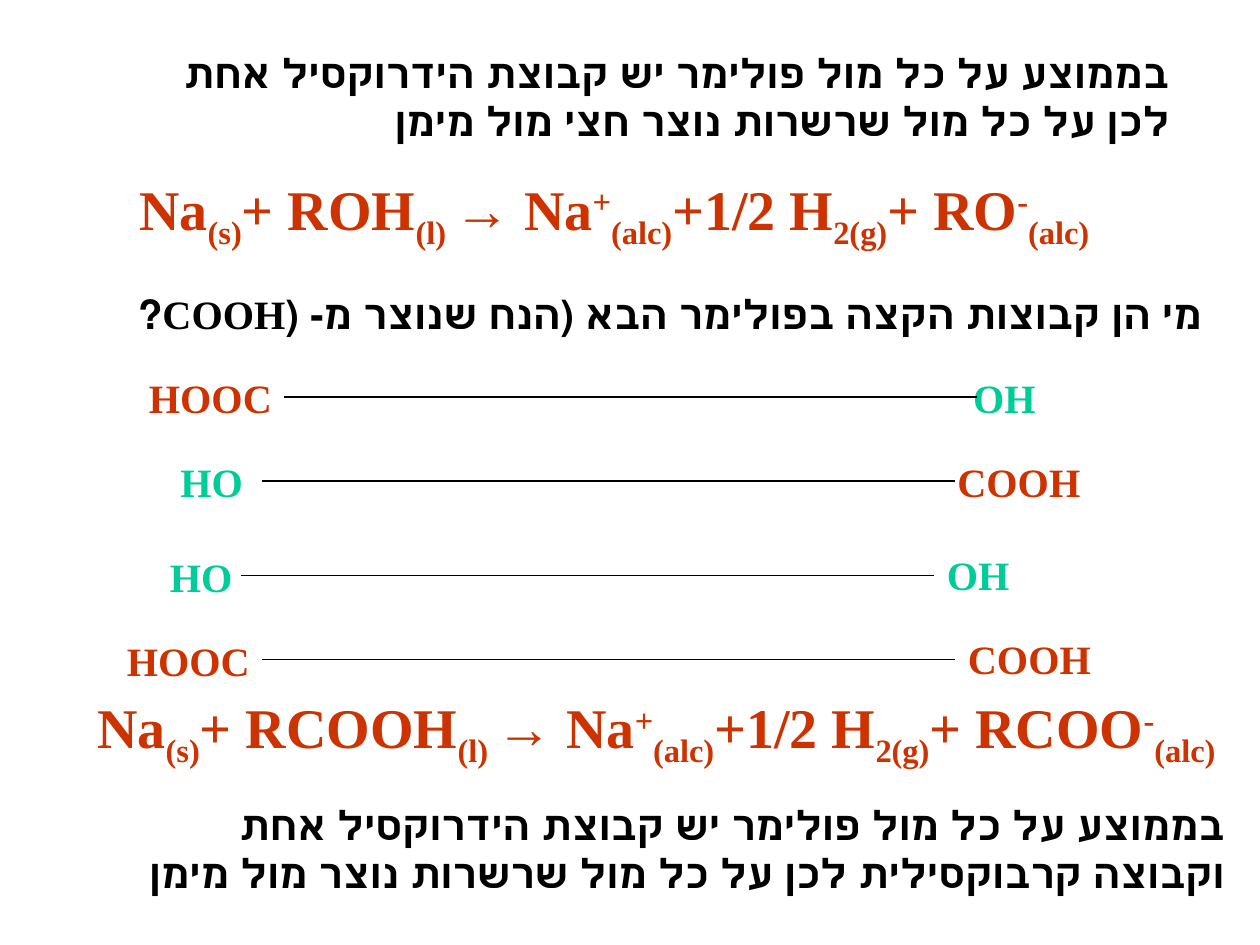
import pptx
import pptx.util
import pptx.dml.color
import pptx.enum.text
import pptx.enum.shapes
import lxml.etree

HUES = {"black": "000000", "red": "CC3300", "green": "00CC99"}
TINT = {"HOOC": "red", "COOH": "red", "HO": "green", "OH": "green"}
FONT = {"name": "Times New Roman", "bold": True}
BASE = {"_": "-25000", "^": "30000"}
ALIGN = pptx.enum.text.PP_ALIGN

NOTES = [
    (6.1, 4, 106.6, 10.4, ["בממוצע על כל מול פולימר יש קבוצת הידרוקסיל אחת",
                           "לכן על כל מול שרשרות נוצר חצי מול מימן"]),
    (-0.6, 27, 116.4, 5.9, ["מי הן קבוצות הקצה בפולימר הבא (הנח שנוצר מ- (COOH?"]),
    (0.4, 75.6, 117.6, 10.4, ["בממוצע על כל מול פולימר יש קבוצת הידרוקסיל אחת \v"
                              "וקבוצה קרבוקסילית לכן על כל מול שרשרות נוצר מול מימן"]),
]
SUMS = [
    (8, 16, 101, "ROH", "RO"),
    (4, 65.4, 117, "RCOOH", "RCOO"),
]
CHAINS = [
    (35, 27, ("HOOC", 13, 0, ALIGN.LEFT), ("OH", 91.5, 0, ALIGN.LEFT)),
    (43, 25, ("HO", 16, 0, ALIGN.LEFT), ("COOH", 90, 0, ALIGN.LEFT)),
    (52, 23, ("HO", 15, 0, ALIGN.LEFT), ("OH", 89, -0.2, ALIGN.LEFT)),
    (60, 25, ("HOOC", 8, 0, ALIGN.RIGHT), ("COOH", 91, -0.2, ALIGN.LEFT)),
]
BOND, DROP = 66, 2.8

deck = pptx.Presentation()
deck.slide_width = pptx.util.Inches(10)
deck.slide_height = pptx.util.Inches(7.5)
slide = deck.slides.add_slide(deck.slide_layouts[6])
UNIT = deck.slide_width / 120


def grid(*cells):
    return [round(c * UNIT) for c in cells]


def paint(run, size, hue):
    for key, val in {**FONT, "size": pptx.util.Pt(size)}.items():
        setattr(run.font, key, val)
    run.font.color.rgb = pptx.dml.color.RGBColor.from_string(HUES[hue])


def add_box(x, y, wide, high):
    frame = slide.shapes.add_textbox(*grid(x, y, wide, high)).text_frame
    frame.word_wrap = True
    frame.auto_size = pptx.enum.text.MSO_AUTO_SIZE.SHAPE_TO_FIT_TEXT
    return frame


def add_note(x, y, wide, high, lines):
    frame = add_box(x, y, wide, high)
    frame.text = "\n".join(lines)
    for para, line in zip(frame.paragraphs, lines):
        para.text = line
        para.alignment = ALIGN.RIGHT
        para._p.get_or_add_pPr().set("rtl", "1")
        for run in para.runs:
            paint(run, 23, "black")


def add_sum(x, y, wide, acid, ion):
    para = add_box(x, y, wide, 7.5).paragraphs[0]
    para.alignment = ALIGN.CENTER
    for part in ["Na", "_(s)", "+ " + acid, "_(l) ", "→ Na", "^+", "_(alc)",
                 "+1/2 H", "_2(g)", "+ " + ion, "^-", "_(alc)"]:
        run = para.add_run()
        run.text = part.lstrip("_^")
        paint(run, 32, "red")
        if part[0] in BASE:
            run._r.get_or_add_rPr().set("baseline", BASE[part[0]])


def add_end(row, name, x, shift, align):
    para = add_box(x, row + shift, 17, 5.8).paragraphs[0]
    para.alignment = align
    run = para.add_run()
    run.text = name
    paint(run, 23, TINT[name])


def add_bond(x, y):
    bond = slide.shapes.add_connector(
        pptx.enum.shapes.MSO_CONNECTOR.STRAIGHT, *grid(x, y, x + BOND, y))
    bond.line.width = pptx.util.Pt(0.75)
    bond.line.color.rgb = pptx.dml.color.RGBColor.from_string(HUES["black"])
    lxml.etree.SubElement(bond._element.spPr, pptx.oxml.ns.qn("a:effectLst"))


for note in NOTES:
    add_note(*note)
for item in SUMS:
    add_sum(*item)
for row, start, *ends in CHAINS:
    for end in ends:
        add_end(row, *end)
    add_bond(start, row + DROP)

deck.save("out.pptx")
